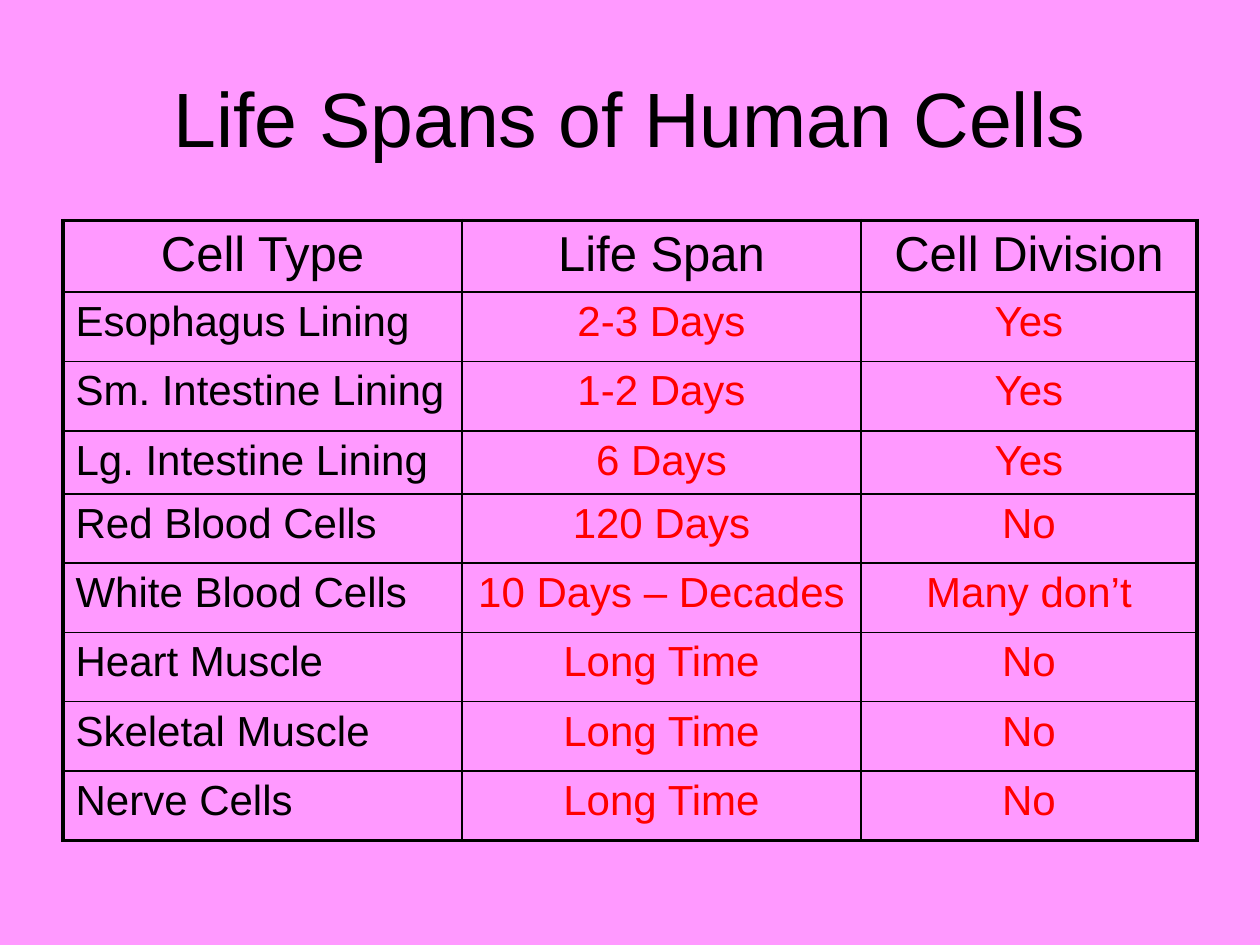
from lxml import etree
from pptx import Presentation
from pptx.dml.color import RGBColor
from pptx.enum.text import MSO_ANCHOR, PP_ALIGN
from pptx.oxml.ns import qn
from pptx.util import Pt

LEFT, CENTER = PP_ALIGN.LEFT, PP_ALIGN.CENTER
TOP, MIDDLE = MSO_ANCHOR.TOP, MSO_ANCHOR.MIDDLE
TITLE_ONLY = 5

COLUMN_WIDTHS = [228, 228, 192]
ROW_HEIGHTS = [41] + [39.6] * 2 + [36] + [39.6] * 5
ROWS = [
    ("Cell Type", "Life Span", "Cell Division"),
    ("Esophagus Lining", "2-3 Days", "Yes"),
    ("Sm. Intestine Lining", "1-2 Days", "Yes"),
    ("Lg. Intestine Lining", "6 Days", "Yes"),
    ("Red Blood Cells", "120 Days", "No"),
    ("White Blood Cells", "10 Days – Decades", "Many don’t"),
    ("Heart Muscle", "Long Time", "No"),
    ("Skeletal Muscle", "Long Time", "No"),
    ("Nerve Cells", "Long Time", "No"),
]


def rgb(value):
    return RGBColor.from_string(value)


class Deck:
    font = "Arial"
    background = "FF99FF"
    ink = "000000"
    accent = "FF0000"
    outer, inner = 2.25, 1

    def __init__(self, width, height):
        self.prs = Presentation()
        self.prs.slide_width, self.prs.slide_height = Pt(width), Pt(height)

    def add_slide(self):
        self.s = self.prs.slides.add_slide(self.prs.slide_layouts[TITLE_ONLY])
        fill = self.s.background.fill
        fill.solid()
        fill.fore_color.rgb = rgb(self.background)

    def set_text(self, tf, text, size, color, align):
        p = tf.paragraphs[0]
        p.text = text
        p.alignment = align
        p.font.name = self.font
        p.font.size = Pt(size)
        p.font.color.rgb = rgb(color)

    def title(self, text, left, top, width, height):
        sp = self.s.shapes.title
        sp.left, sp.top, sp.width, sp.height = map(Pt, (left, top, width, height))
        sp.text_frame.vertical_anchor = MIDDLE
        sp.text_frame.word_wrap = True
        self.set_text(sp.text_frame, text, 44, self.ink, CENTER)

    def borders(self, cell, edges):
        tc_pr = cell._tc.get_or_add_tcPr()
        for side, on_edge in edges.items():
            width = Pt(self.outer if on_edge else self.inner)
            ln = etree.SubElement(tc_pr, qn(f"a:ln{side}"), w=str(width))
            fill = etree.SubElement(ln, qn("a:solidFill"))
            etree.SubElement(fill, qn("a:srgbClr"), val=self.ink)

    def table(self, rows, left, top, widths, heights):
        last_row, last_col = len(heights) - 1, len(widths) - 1
        frame = self.s.shapes.add_table(len(heights), len(widths), Pt(left), Pt(top),
                                        Pt(sum(widths)), Pt(sum(heights)))
        table = frame.table
        table.first_row = table.horz_banding = False
        for column, width in zip(table.columns, widths):
            column.width = Pt(width)
        for row, height in zip(table.rows, heights):
            row.height = Pt(height)
        for i, texts in enumerate(rows):
            for j, text in enumerate(texts):
                cell = table.cell(i, j)
                cell.vertical_anchor = TOP
                self.borders(cell, {"L": j == 0, "R": j == last_col,
                                    "T": i == 0, "B": i == last_row})
                cell.fill.background()
                self.set_text(cell.text_frame, text,
                              28 if i == 0 else 24,
                              self.accent if i and j else self.ink,
                              LEFT if i and j == 0 else CENTER)


def main():
    deck = Deck(720, 540)
    deck.add_slide()
    deck.title("Life Spans of Human Cells", 36, 21.6, 648, 90)
    deck.table(ROWS, 36, 126, COLUMN_WIDTHS, ROW_HEIGHTS)
    deck.prs.save("out.pptx")


if __name__ == "__main__":
    main()
